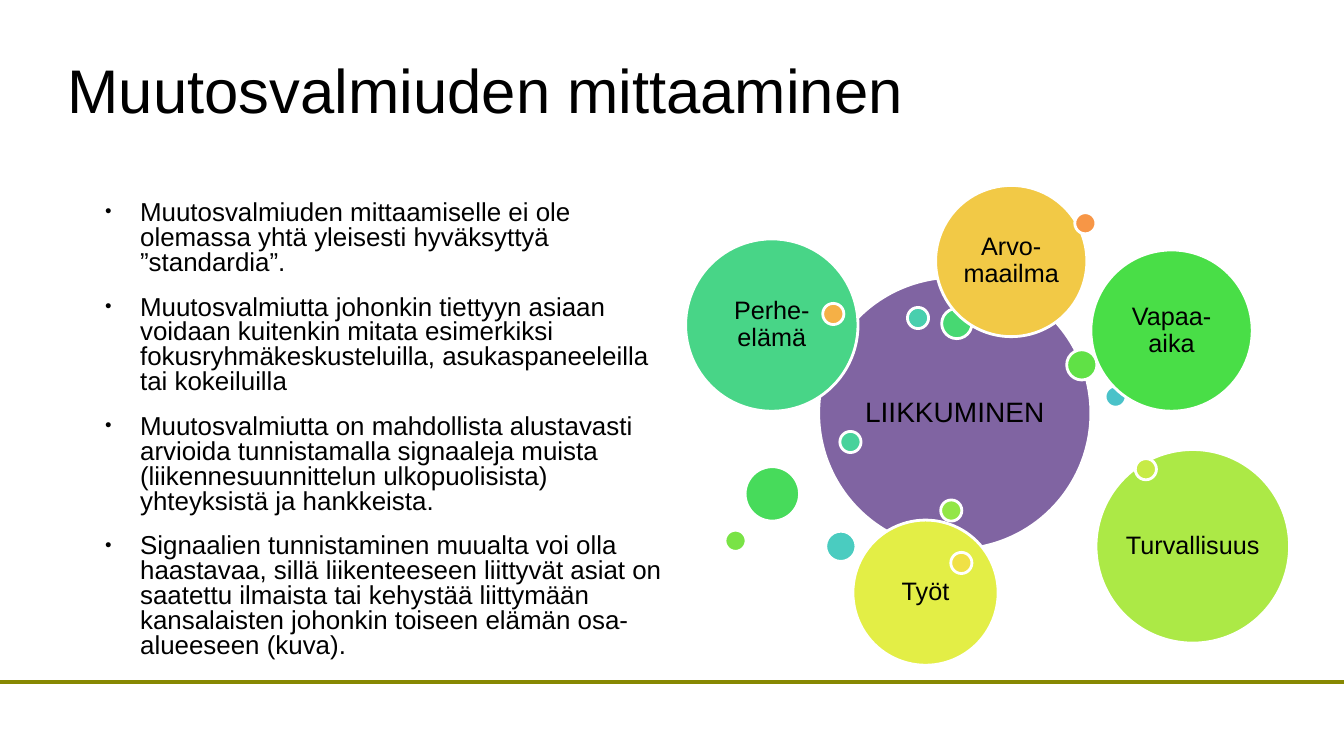
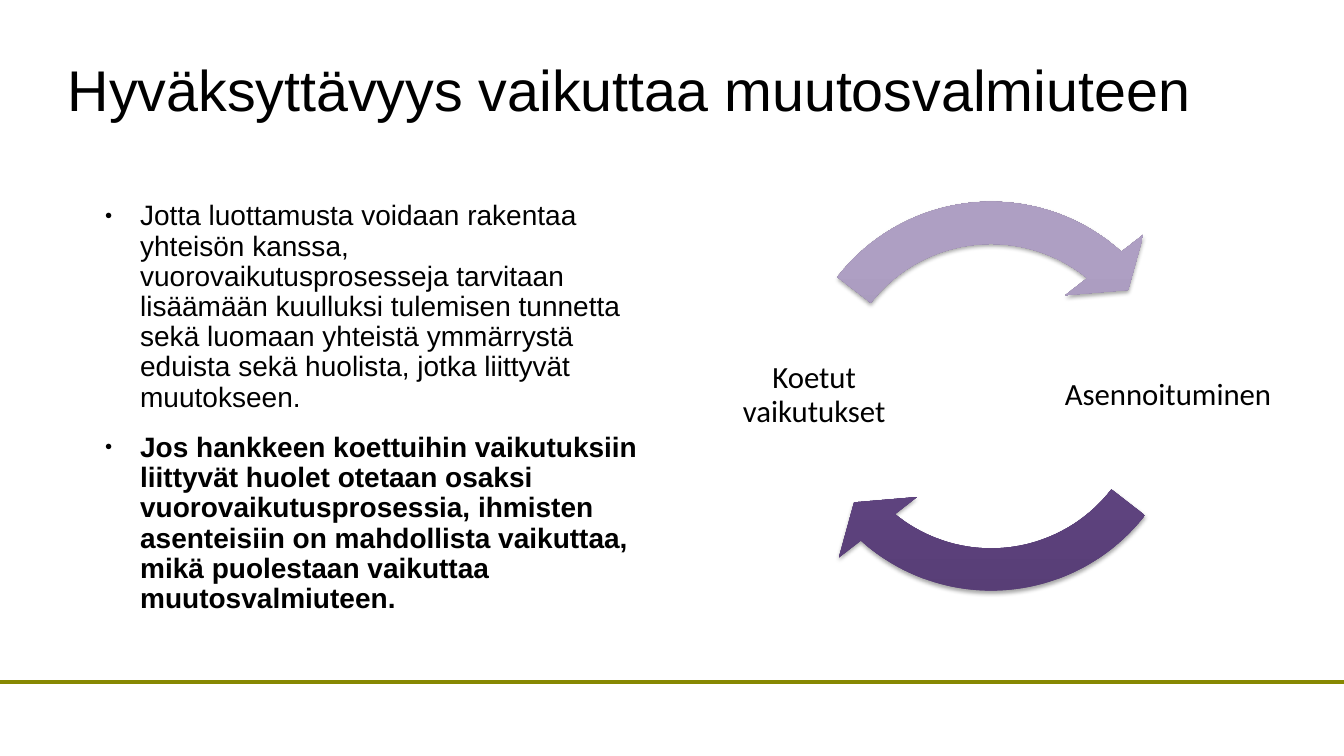
import colorsys

from lxml import etree
from pptx import Presentation
from pptx.dml.color import RGBColor
from pptx.enum import shapes, text
from pptx.oxml.ns import qn
from pptx.util import Pt

PX = 9144  # 100 px to the inch
WIDE, HIGH = 1333, 750
FONT, LABEL = "Arial", "Calibri"

BLACK = RGBColor(0x00, 0x00, 0x00)
WHITE = RGBColor(0xFF, 0xFF, 0xFF)
OLIVE = RGBColor(0x87, 0x88, 0x02)
PURPLE = RGBColor(0x80, 0x64, 0xA2)
TEAL = RGBColor(0x4B, 0xAC, 0xC6)
ORANGE = RGBColor(0xF7, 0x96, 0x46)
DARK = (RGBColor(0x56, 0x3D, 0x74), RGBColor(0x70, 0x50, 0x97))
LIGHT = (RGBColor(0x86, 0x7B, 0x96), RGBColor(0xAE, 0x9F, 0xC3))

TITLE_BOX = (67, 30, 1200, 125)
BODY_BOX = (92, 200, 567, 476)
RULE_Y = 677

PAGES = [
    dict(title="Muutosvalmiuden mittaaminen", head=44, size=18.5, lines=0.8, body=[
        ("Muutosvalmiuden mittaamiselle ei ole olemassa yhtä yleisesti hyväksyttyä "
         "”standardia”.", False),
        ("Muutosvalmiutta johonkin tiettyyn asiaan voidaan kuitenkin mitata esimerkiksi "
         "fokusryhmäkeskusteluilla, asukaspaneeleilla tai kokeiluilla", False),
        ("Muutosvalmiutta on mahdollista alustavasti arvioida tunnistamalla signaaleja "
         "muista (liikennesuunnittelun ulkopuolisista) yhteyksistä ja hankkeista.", False),
        ("Signaalien tunnistaminen muualta voi olla haastavaa, sillä liikenteeseen "
         "liittyvät asiat on saatettu ilmaista tai kehystää liittymään kansalaisten "
         "johonkin toiseen elämän osa-alueeseen (kuva).", False),
    ]),
    dict(title="Hyväksyttävyys vaikuttaa muutosvalmiuteen", head=41, size=20, lines=0.9, body=[
        ("Jotta luottamusta voidaan rakentaa yhteisön kanssa, vuorovaikutusprosesseja "
         "tarvitaan lisäämään kuulluksi tulemisen tunnetta sekä luomaan yhteistä "
         "ymmärrystä eduista sekä huolista, jotka liittyvät muutokseen.", False),
        ("Jos hankkeen koettuihin vaikutuksiin liittyvät huolet otetaan osaksi "
         "vuorovaikutusprosessia, ihmisten asenteisiin on mahdollista vaikuttaa, "
         "mikä puolestaan vaikuttaa muutosvalmiuteen.", True),
    ]),
]

HUB = (812, 275, 270, "LIIKKUMINEN")
SMALL, MID = 21, 30
# left, top, diameter, label; colours run from teal to orange in this order
BUBBLES = [
    (894, 521, SMALL, ""), (1096, 383, SMALL, ""), (819, 527, MID, ""),
    (900, 305, SMALL, ""), (833, 428, SMALL, ""), (680, 237, 171, "Perhe-elämä"),
    (934, 306, MID, ""), (739, 463, 54, ""), (1082, 248, 160, "Vapaa-aika"),
    (1058, 347, MID, ""), (719, 526, SMALL, ""), (933, 496, SMALL, ""),
    (1087, 446, 192, "Turvallisuus"), (1126, 455, SMALL, ""), (846, 516, 144, "Työt"),
    (943, 548, SMALL, ""), (928, 184, 150, "Arvo-maailma"), (816, 301, SMALL, ""),
    (1066, 211, SMALL, ""),
]

RING = (762, 172, 442, 442)
ARROWS = [(DARK, 78.47, 22.67), (LIGHT, 186.47, 130.67)]  # tip and tail angles
ENDS = [(1051, "Asennoituminen"), (700, "Koetut vaikutukset")]
END_Y, END_SIDE = 285, 215


def px(*nums):
    return [n * PX for n in nums]


def sub(node, tag, **atts):
    return etree.SubElement(node, qn(tag), {k: str(v) for k, v in atts.items()})


def prep(frame, anchor, inset=0):
    frame.word_wrap = True
    frame.auto_size = text.MSO_AUTO_SIZE.NONE
    frame.vertical_anchor = anchor
    frame.margin_left = frame.margin_right = inset * PX
    frame.margin_top = frame.margin_bottom = inset * PX


def write(para, words, size, font=FONT, bold=False, lines=0.9, align=text.PP_ALIGN.LEFT):
    para.alignment, para.line_spacing = align, lines
    run = para.add_run()
    run.text = words
    run.font.size, run.font.name, run.font.bold = Pt(size), font, bold
    run.font.color.rgb = BLACK


def center(frame, words, size, font=FONT, inset=0):
    prep(frame, text.MSO_ANCHOR.MIDDLE, inset)
    write(frame.paragraphs[0], words, size, font, align=text.PP_ALIGN.CENTER)


def bullet(para):
    props = para._p.get_or_add_pPr()
    props.set("marL", str(47 * PX))
    props.set("indent", str(-35 * PX))
    sub(sub(props, "a:buClr"), "a:srgbClr", val=BLACK)
    sub(props, "a:buSzPct", val=45000)
    sub(props, "a:buFont", typeface=FONT)
    sub(props, "a:buChar", char="●")


def start(deck, page):
    """Add a slide with its rule, title and bulleted text."""
    slide = deck.slides.add_slide(deck.slide_layouts[5])
    rule = slide.shapes.add_connector(
        shapes.MSO_CONNECTOR.STRAIGHT, *px(0, RULE_Y, WIDE, RULE_Y))
    rule.line.color.rgb, rule.line.width = OLIVE, Pt(2.83)
    sub(rule.element.spPr, "a:effectLst")

    title = slide.shapes.title
    title.left, title.top, title.width, title.height = px(*TITLE_BOX)
    prep(title.text_frame, text.MSO_ANCHOR.MIDDLE)
    write(title.text_frame.paragraphs[0], page["title"], page["head"])

    frame = slide.shapes.add_textbox(*px(*BODY_BOX)).text_frame
    prep(frame, text.MSO_ANCHOR.TOP)
    for i, (words, bold) in enumerate(page["body"]):
        para = frame.add_paragraph() if i else frame.paragraphs[0]
        bullet(para)
        if i:
            para.space_before = Pt(14.2)
        write(para, words, page["size"], bold=bold, lines=page["lines"])
    return slide


def blend(part):
    """Mix teal and orange by hue, lightness and saturation."""
    ends = [colorsys.rgb_to_hls(*(c / 255 for c in tone)) for tone in (TEAL, ORANGE)]
    mix = [a + (b - a) * part for a, b in zip(*ends)]
    return RGBColor(*(round(c * 255) for c in colorsys.hls_to_rgb(*mix)))


def bubble(slide, spot, color, size=18):
    left, top, side, words = spot
    disc = slide.shapes.add_shape(shapes.MSO_SHAPE.OVAL, *px(left, top, side, side))
    disc.shadow.inherit = False
    disc.fill.solid()
    disc.fill.fore_color.rgb = color
    disc.line.color.rgb, disc.line.width = WHITE, Pt(2)
    if words:
        center(disc.text_frame, words, size)


def arrow(slide, tones, tip, tail):
    arc = slide.shapes.add_shape(shapes.MSO_SHAPE.CIRCULAR_ARROW, *px(*RING))
    for i, val in enumerate((0.095, 6.86, tip, tail, 0.111)):
        arc.adjustments[i] = val
    arc.line.fill.background()
    arc.fill.gradient()
    arc.fill.gradient_angle = 90
    for stop, tone, spot in zip(arc.fill.gradient_stops, tones, (0, 0.8)):
        stop.color.rgb, stop.position = tone, spot
    arc.shadow.inherit = False
    glow = sub(arc.element.spPr.find(qn("a:effectLst")), "a:outerShdw",
               blurRad=Pt(3.1), dist=Pt(1.8), dir=90 * 60000, rotWithShape=0)
    sub(sub(glow, "a:srgbClr", val=BLACK), "a:alpha", val=35000)


def main():
    deck = Presentation()
    deck.slide_width, deck.slide_height = px(WIDE, HIGH)
    first, second = [start(deck, page) for page in PAGES]

    bubble(first, HUB, PURPLE, 20)
    for i, spot in enumerate(BUBBLES):
        bubble(first, spot, blend(i / (len(BUBBLES) - 1)))

    for item in ARROWS:
        arrow(second, *item)
    for left, words in ENDS:
        box = second.shapes.add_textbox(*px(left, END_Y, END_SIDE, END_SIDE))
        center(box.text_frame, words, 22, LABEL, 3)
    deck.save("out.pptx")


if __name__ == "__main__":
    main()
